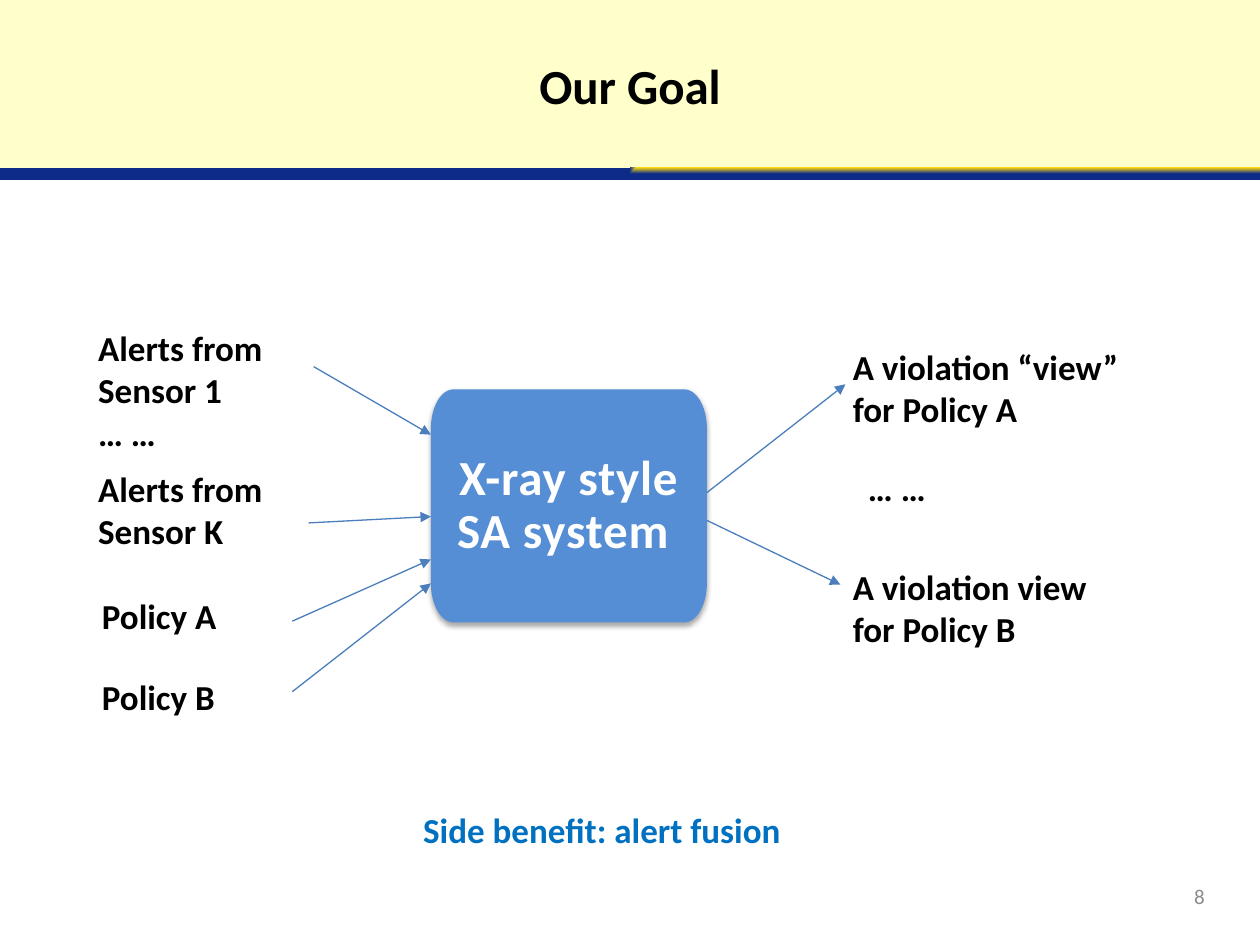
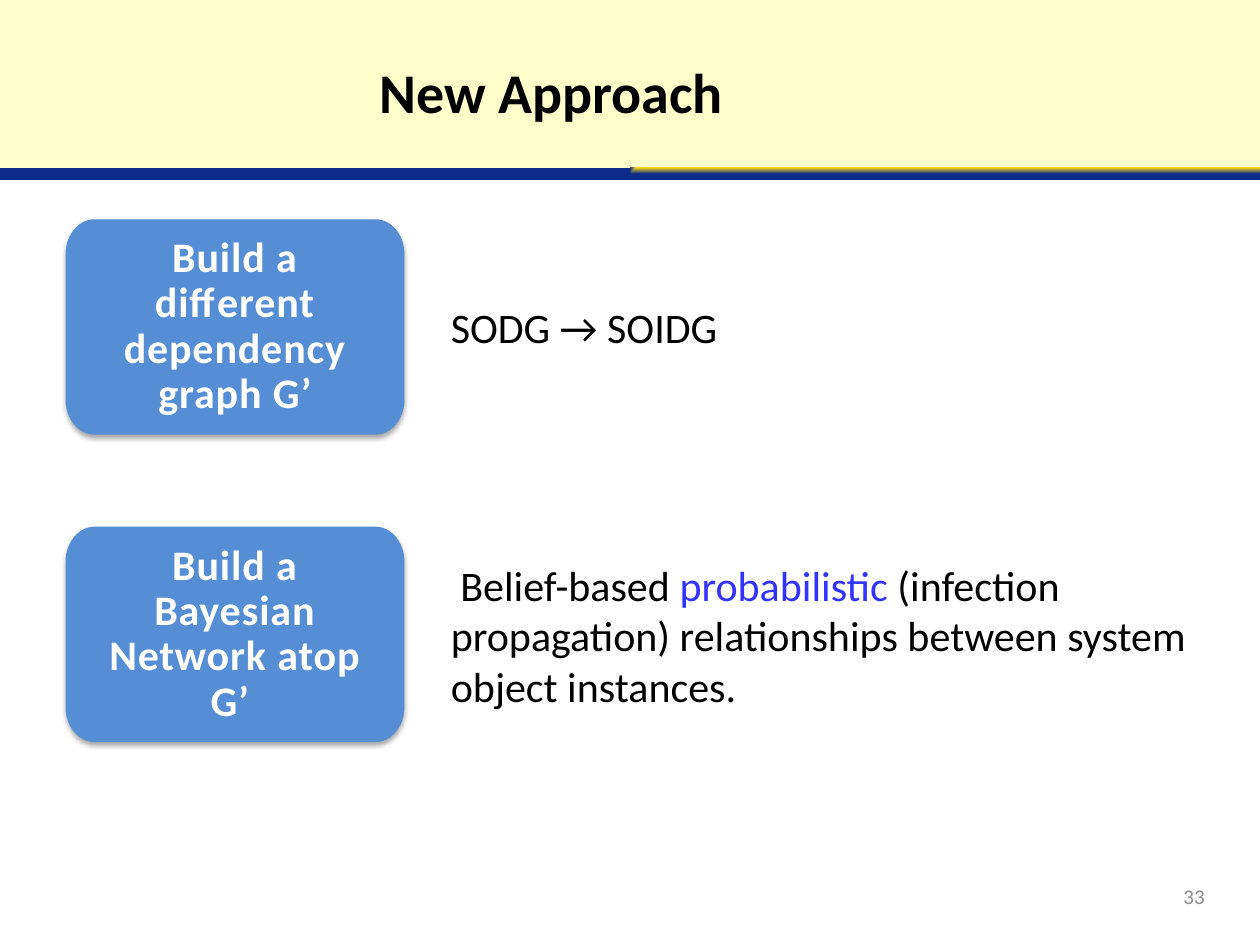
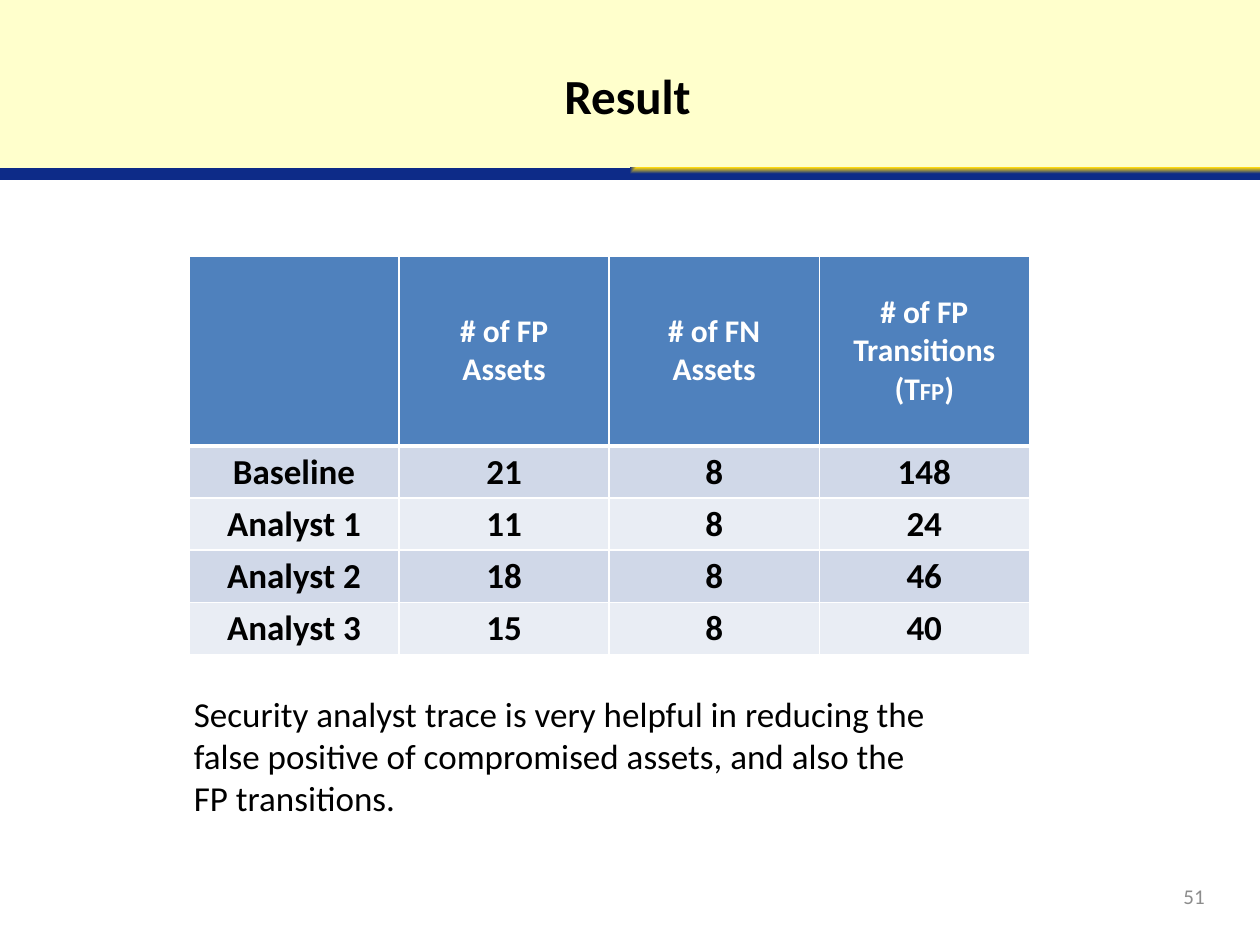
import math

import pptx
import pptx.dml.color
import pptx.enum.shapes
import pptx.enum.text
import pptx.oxml
import pptx.oxml.ns
import pptx.util

Inches = pptx.util.Inches
Pt = pptx.util.Pt
RGBColor = pptx.dml.color.RGBColor
Align = pptx.enum.text.PP_ALIGN
Anchor = pptx.enum.text.MSO_ANCHOR

FONT = "Calibri"
BLACK = RGBColor(0x00, 0x00, 0x00)
WHITE = RGBColor(0xFF, 0xFF, 0xFF)
CREAM = RGBColor(0xFF, 0xFF, 0xCC)
GOLD = RGBColor(0xFE, 0xD9, 0x10)
NAVY = RGBColor(0x0D, 0x2B, 0x88)
GREY = RGBColor(0x8C, 0x8C, 0x8C)
NODE_BLUE = RGBColor(0x55, 0x8E, 0xD5)
ARROW_BLUE = RGBColor(0x4B, 0x7E, 0xBC)
BENEFIT_BLUE = RGBColor(0x00, 0x70, 0xC0)
TERM_BLUE = RGBColor(0x33, 0x33, 0xFF)
HEADER_BLUE = RGBColor(0x4F, 0x81, 0xBD)
ROW_TINTS = (RGBColor(0xD0, 0xD8, 0xE8), RGBColor(0xE9, 0xED, 0xF4))

NUMBER_BOX = (7.33, 6.91, 2.33, 0.4)

GOAL_SYSTEM = ("X-ray style SA system ", (3.42, 3.09, 2.19, 1.85), (0.18, 0.31), 28)
GOAL_LABELS = [
    ("Alerts from Sensor 1", (0.68, 2.54, 1.81, 0.72)),
    ("… …", (0.68, 3.22, 1.81, 0.34)),
    ("Alerts from Sensor K", (0.68, 3.66, 1.81, 0.72)),
    ("Policy A", (0.71, 4.67, 1.81, 0.36)),
    ("Policy B", (0.71, 5.31, 1.81, 0.36)),
    ("A violation “view” for Policy A", (6.67, 2.69, 2.41, 0.43)),
    ("… …", (6.79, 3.65, 1.81, 0.34)),
    ("A violation view for Policy B", (6.67, 4.44, 2.06, 0.41)),
]
GOAL_BENEFIT = ("Side benefit: alert fusion", (3.26, 6.37, 3.48, 0.59))
INPUT_ARROWS = [
    ((2.49, 2.91), 3.45),
    ((2.45, 4.15), 4.1),
    ((2.32, 4.93), 4.44),
    ((2.32, 5.49), 4.63),
]
OUTPUT_ARROWS = [(3.91, (6.71, 3.05)), (4.13, (6.67, 4.64))]

STEP_LEFT, STEP_TOP, STEP_PITCH = 0.52, 1.74, 2.44
STEP_SIZE = (2.69, 1.71)
STEP_CORNER = (0.23, 0.28)
APPROACH_STEPS = [
    ("Build a different dependency graph G’", [("SODG → SOIDG", BLACK)],
     (3.48, 2.34, 2.43, 0.5)),
    ("Build a Bayesian Network atop G’ ",
     [(" Belief-based ", BLACK), ("probabilistic", TERM_BLUE),
      (" (infection propagation) relationships between system object instances.", BLACK)],
     (3.48, 4.39, 6.17, 1.31)),
]

RESULT_HEADERS = [
    [],
    [["# of FP"], ["Assets"]],
    [["# of FN"], ["Assets"]],
    [["# of FP Transitions (T", ("FP", 14), ")"]],
]
RESULT_ROWS = [
    ("Baseline", 21, 8, 148),
    ("Analyst 1", 11, 8, 24),
    ("Analyst 2", 18, 8, 46),
    ("Analyst 3", 15, 8, 40),
]
RESULT_BOX = (1.5, 2.03, 6.67, 3.15)
HEADER_HEIGHT, ROW_HEIGHT = 1.51, 0.41
RESULT_REMARK = (
    "Security analyst trace is very helpful in reducing the false positive of "
    "compromised assets, and also the FP transitions.",
    (1.44, 5.45, 6.13, 1.11),
)


def inches(values):
    return [Inches(value) for value in values]


def drawing_xml(xml):
    tag_end = min(i for i in (xml.find(" "), xml.find(">")) if i > 0)
    return pptx.oxml.parse_xml(
        xml[:tag_end] + " " + pptx.oxml.ns.nsdecls("a") + xml[tag_end:])


def style(paragraph, size, color=BLACK, bold=False, align=Align.LEFT):
    paragraph.alignment = align
    font = paragraph.font
    font.name, font.size, font.bold = FONT, Pt(size), bold
    font.color.rgb = color


def add_label(slide, text, box, size=20, color=BLACK, bold=True, align=Align.LEFT,
              anchor=Anchor.TOP):
    frame = slide.shapes.add_textbox(*inches(box)).text_frame
    frame.word_wrap = True
    frame.vertical_anchor = anchor
    paragraph = frame.paragraphs[0]
    paragraph.text = text
    style(paragraph, size, color, bold, align)
    return paragraph


def add_band(slide, box, order):
    band = slide.shapes.add_shape(pptx.enum.shapes.MSO_SHAPE.RECTANGLE, *inches(box))
    band.shadow.inherit = False
    band.line.fill.background()
    slide.shapes.element.insert(2 + order, band.element)
    return band


def add_slide(deck, title, box, number, size=28, align=Align.CENTER):
    slide = deck.slides.add_slide(deck.slide_layouts[5])
    heading = slide.shapes.title
    heading.left, heading.top, heading.width, heading.height = inches(box)
    frame = heading.text_frame
    frame.text = title
    frame.vertical_anchor = Anchor.TOP
    frame.auto_size = pptx.enum.text.MSO_AUTO_SIZE.NONE
    style(frame.paragraphs[0], size, bold=True, align=align)

    header = add_band(slide, (0, 0, 10, 1.35), 0)
    header.fill.solid()
    header.fill.fore_color.rgb = CREAM
    stripe = add_band(slide, (0, 1.33, 10, 0.1), 1)
    stripe.element.spPr.find(pptx.oxml.ns.qn("a:prstGeom")).addnext(drawing_xml(
        f'<a:gradFill rotWithShape="1"><a:gsLst>'
        f'<a:gs pos="0"><a:srgbClr val="{GOLD}"/></a:gs>'
        f'<a:gs pos="100000"><a:srgbClr val="{NAVY}"/></a:gs></a:gsLst>'
        f'<a:path path="rect"><a:fillToRect l="100000" b="100000"/></a:path>'
        f'</a:gradFill>'))
    add_label(slide, str(number), NUMBER_BOX, 12, GREY, False, Align.RIGHT, Anchor.MIDDLE)
    return slide


def rounded_outline(box, corner, steps=12):
    left, top, width, height = box
    rx, ry = corner
    right, bottom = left + width, top + height
    centres = [(right - rx, bottom - ry), (left + rx, bottom - ry),
               (left + rx, top + ry), (right - rx, top + ry)]
    return [
        (Inches(x + rx * math.cos(angle)), Inches(y + ry * math.sin(angle)))
        for quarter, (x, y) in enumerate(centres)
        for angle in ((quarter + step / steps) * math.pi / 2 for step in range(steps + 1))
    ]


def add_node(slide, text, box, corner, size):
    outline = rounded_outline(box, corner)
    builder = slide.shapes.build_freeform(*outline[0], scale=1.0)
    builder.add_line_segments(outline[1:], close=True)
    node = builder.convert_to_shape()
    node.fill.solid()
    node.fill.fore_color.rgb = NODE_BLUE
    node.line.fill.background()
    node.shadow.inherit = False
    node.element.spPr.find(pptx.oxml.ns.qn("a:effectLst")).append(drawing_xml(
        '<a:outerShdw blurRad="40000" dist="23000" dir="5400000" rotWithShape="0">'
        '<a:srgbClr val="000000"><a:alpha val="35000"/></a:srgbClr></a:outerShdw>'))
    frame = node.text_frame
    frame.word_wrap = True
    frame.vertical_anchor = Anchor.MIDDLE
    frame.margin_left = frame.margin_right = Inches(0.18)
    frame.margin_top = frame.margin_bottom = Inches(0.18)
    paragraph = frame.paragraphs[0]
    paragraph.text = text
    paragraph.line_spacing = 0.9
    style(paragraph, size, WHITE, True, Align.CENTER)
    properties = paragraph.runs[0].font._element
    properties.set("spc", "50")
    properties.append(drawing_xml(
        '<a:effectLst><a:outerShdw blurRad="38100" dist="25400" dir="2700000">'
        '<a:srgbClr val="000000"><a:alpha val="40000"/></a:srgbClr>'
        '</a:outerShdw></a:effectLst>'))


def add_arrow(slide, start, end):
    arrow = slide.shapes.add_connector(
        pptx.enum.shapes.MSO_CONNECTOR.STRAIGHT, *inches(start + end))
    arrow.line.color.rgb = ARROW_BLUE
    arrow.line.width = Pt(0.75)
    arrow.line._ln.append(drawing_xml('<a:tailEnd type="triangle"/>'))
    arrow.element.spPr.append(drawing_xml("<a:effectLst></a:effectLst>"))


def format_cell(cell, fill, bottom_width=1):
    cell.fill.solid()
    cell.fill.fore_color.rgb = fill
    cell.vertical_anchor = Anchor.MIDDLE
    cell.margin_left = cell.margin_right = Inches(0.07)
    cell.margin_top = cell.margin_bottom = Inches(0.04)
    properties = cell._tc.get_or_add_tcPr()
    for order, side in enumerate("LRTB"):
        width = Pt(bottom_width if side == "B" else 1)
        properties.insert(order, drawing_xml(
            f'<a:ln{side} w="{width}"><a:solidFill><a:srgbClr val="{WHITE}"/>'
            f'</a:solidFill></a:ln{side}>'))


def add_goal(deck):
    slide = add_slide(deck, "Our Goal", (0.5, 0.39, 9, 0.86), 8)
    add_node(slide, *GOAL_SYSTEM)
    for text, box in GOAL_LABELS:
        add_label(slide, text, box)
    left, _, width, _ = GOAL_SYSTEM[1]
    for start, y in INPUT_ARROWS:
        add_arrow(slide, start, (left, y))
    for y, end in OUTPUT_ARROWS:
        add_arrow(slide, (left + width, y), end)
    add_label(slide, *GOAL_BENEFIT, color=BENEFIT_BLUE)


def add_approach(deck):
    slide = add_slide(deck, "New Approach", (2.91, 0.41, 3.91, 0.84), 33, 32, Align.LEFT)
    for index, (step, detail, detail_box) in enumerate(APPROACH_STEPS):
        box = (STEP_LEFT, STEP_TOP + index * STEP_PITCH) + STEP_SIZE
        add_node(slide, step, box, STEP_CORNER, 24)
        paragraph = add_label(slide, "", detail_box, 24, bold=False)
        for text, color in detail:
            run = paragraph.add_run()
            run.text = text
            run.font.color.rgb = color


def add_result(deck):
    slide = add_slide(deck, "Result", (0.67, 0.47, 8.62, 1.09), 51)
    table = slide.shapes.add_table(
        len(RESULT_ROWS) + 1, len(RESULT_HEADERS), *inches(RESULT_BOX)).table
    for row in table.rows:
        row.height = Inches(ROW_HEIGHT)
    table.rows[0].height = Inches(HEADER_HEIGHT)

    for column, lines in enumerate(RESULT_HEADERS):
        cell = table.cell(0, column)
        format_cell(cell, HEADER_BLUE, 3)
        for index, parts in enumerate(lines):
            frame = cell.text_frame
            paragraph = frame.add_paragraph() if index else frame.paragraphs[0]
            style(paragraph, 18, WHITE, True, Align.CENTER)
            for part in parts:
                text, size = part if isinstance(part, tuple) else (part, 18)
                run = paragraph.add_run()
                run.text = text
                run.font.size = Pt(size)

    for index, values in enumerate(RESULT_ROWS):
        for column, value in enumerate(values):
            cell = table.cell(index + 1, column)
            format_cell(cell, ROW_TINTS[index % 2])
            cell.text = str(value)
            style(cell.text_frame.paragraphs[0], 20, bold=True, align=Align.CENTER)
    add_label(slide, *RESULT_REMARK, bold=False)


def main():
    deck = pptx.Presentation()
    deck.slide_width, deck.slide_height = inches((10, 7.5))
    add_goal(deck)
    add_approach(deck)
    add_result(deck)
    deck.save("out.pptx")


if __name__ == "__main__":
    main()
